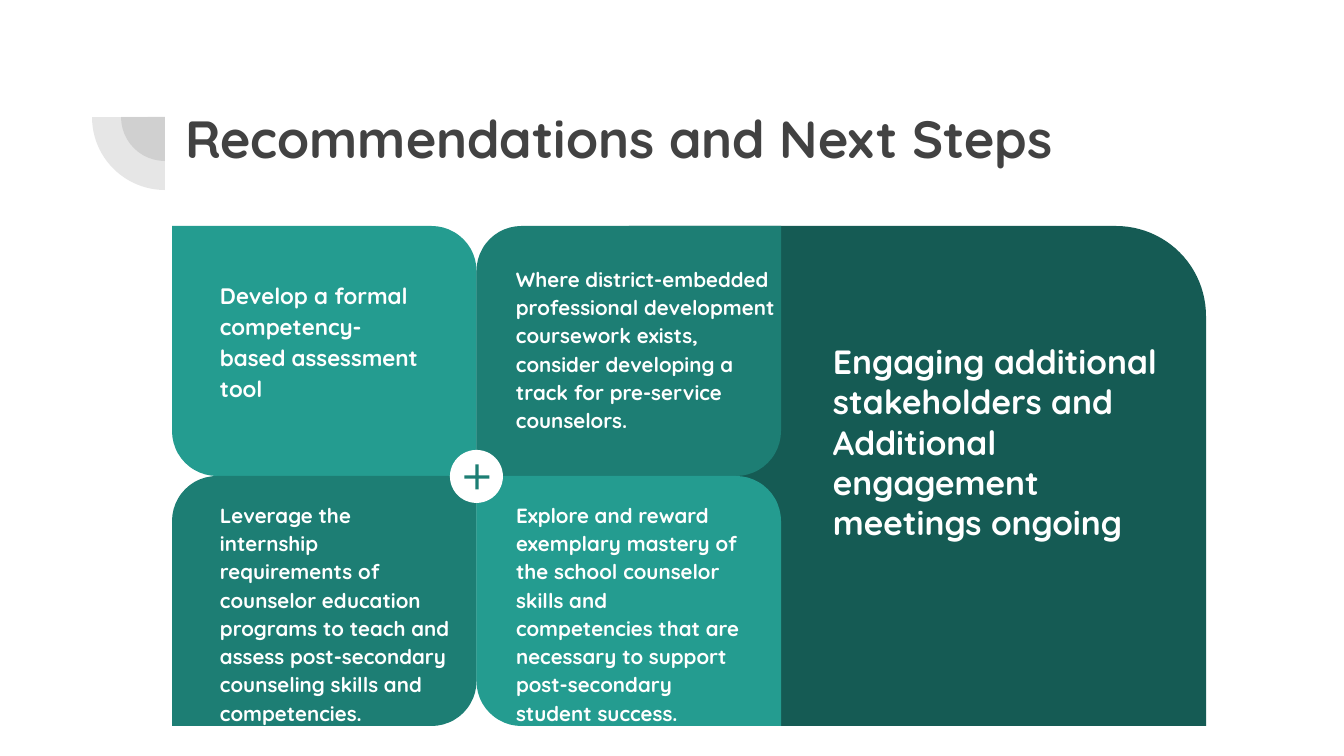
from lxml.etree import SubElement
from pptx import Presentation
from pptx.dml.color import RGBColor
from pptx.enum.shapes import MSO_SHAPE
from pptx.enum.text import MSO_ANCHOR, MSO_AUTO_SIZE, PP_ALIGN
from pptx.oxml.ns import qn
from pptx.util import Pt

PX = 914400 / 134.4
GREY, WHITE = "424242", "FFFFFF"
DARK, MID, LIGHT = "155B54", "1D7E74", "249C90"

prs = Presentation()
prs.slide_width, prs.slide_height = round(1344 * PX), round(756 * PX)
slide = prs.slides.add_slide(prs.slide_layouts[5])


def add_filled(preset, box, color, *adjustments):
    shape = slide.shapes.add_shape(preset, *(round(v * PX) for v in box))
    shape.shadow.inherit = False
    shape.fill.solid()
    shape.fill.fore_color.rgb = RGBColor.from_string(color)
    shape.line.fill.background()
    for i, value in enumerate(adjustments):
        shape.adjustments[i] = value
    return shape


def write(holder, paragraphs, size, color, spacing=1.0):
    frame = holder.text_frame
    frame.word_wrap = True
    frame.auto_size = MSO_AUTO_SIZE.NONE
    frame.vertical_anchor = MSO_ANCHOR.TOP
    frame.margin_left = frame.margin_right = round(13 * PX)
    frame.margin_top = frame.margin_bottom = round(13 * PX)
    frame.text = "\n".join(paragraphs)
    for paragraph in frame.paragraphs:
        paragraph.alignment = PP_ALIGN.LEFT
        paragraph.line_spacing = spacing
        font = paragraph.font
        font.name, font.size, font.bold = "Quicksand", Pt(size), True
        font.color.rgb = RGBColor.from_string(color)


# Translucent quarter circles around one centre
for radius in (44, 73):
    quarter = add_filled(
        MSO_SHAPE.PIE, (165 - radius, 117 - radius, 2 * radius, 2 * radius), GREY, 54, 108)
    tint = quarter.fill._xPr.find(qn("a:solidFill"))[0]
    SubElement(tint, qn("a:alpha")).set("val", "13000")

# Title
title = slide.shapes.title
title.left, title.top, title.width, title.height = (
    round(v * PX) for v in (172, 93, 1034, 146))
write(title, ["Recommendations and Next Steps"], 28, GREY)

# Large panel, then a two by two grid of cards over its left part
LEFT, TOP, CARD_W, CARD_H = 172, 226, 304.5, 250
add_filled(MSO_SHAPE.ROUND_2_DIAG_RECTANGLE, (629, TOP, 577, 2 * CARD_H), DARK, 0, 0.18)
for row in range(2):
    for col in range(2):
        on_diagonal = row == col
        add_filled(
            MSO_SHAPE.ROUND_2_DIAG_RECTANGLE,
            (LEFT + col * CARD_W, TOP + row * CARD_H, CARD_W, CARD_H),
            LIGHT if on_diagonal else MID,
            *((0, 0.18) if on_diagonal else (0.18, 0)))

# Recommendations: box, size, line spacing, paragraphs
recommendations = [
    ((207, 265, 227, 74), 12, 1.15,
     ["Develop a formal competency-based assessment tool"]),
    ((503, 250, 285, 112), 11, 1.15,
     ["Where district-embedded professional development coursework exists, "
      "consider developing a track for pre-service counselors."]),
    ((207, 486, 258, 102), 11, 1.15,
     ["Leverage the internship requirements of counselor education programs to "
      "teach and assess post-secondary counseling skills and competencies."]),
    ((503, 486, 259, 102), 11, 1.15,
     ["Explore and reward exemplary mastery of the school counselor skills and "
      "competencies that are necessary to support post-secondary student success."]),
    ((820, 328, 372, 101), 18, 1.0,
     ["Engaging additional stakeholders and",
      "Additional engagement meetings ongoing"]),
]
for box, size, spacing, paragraphs in recommendations:
    recommendation = slide.shapes.add_textbox(*(round(v * PX) for v in box))
    write(recommendation, paragraphs, size, WHITE, spacing)

# Plus badge where the four cards meet
add_filled(MSO_SHAPE.OVAL, (450, 450, 53, 53), WHITE)
add_filled(MSO_SHAPE.MATH_PLUS, (460, 460, 34, 34), MID, 0.1)

prs.save("out.pptx")
